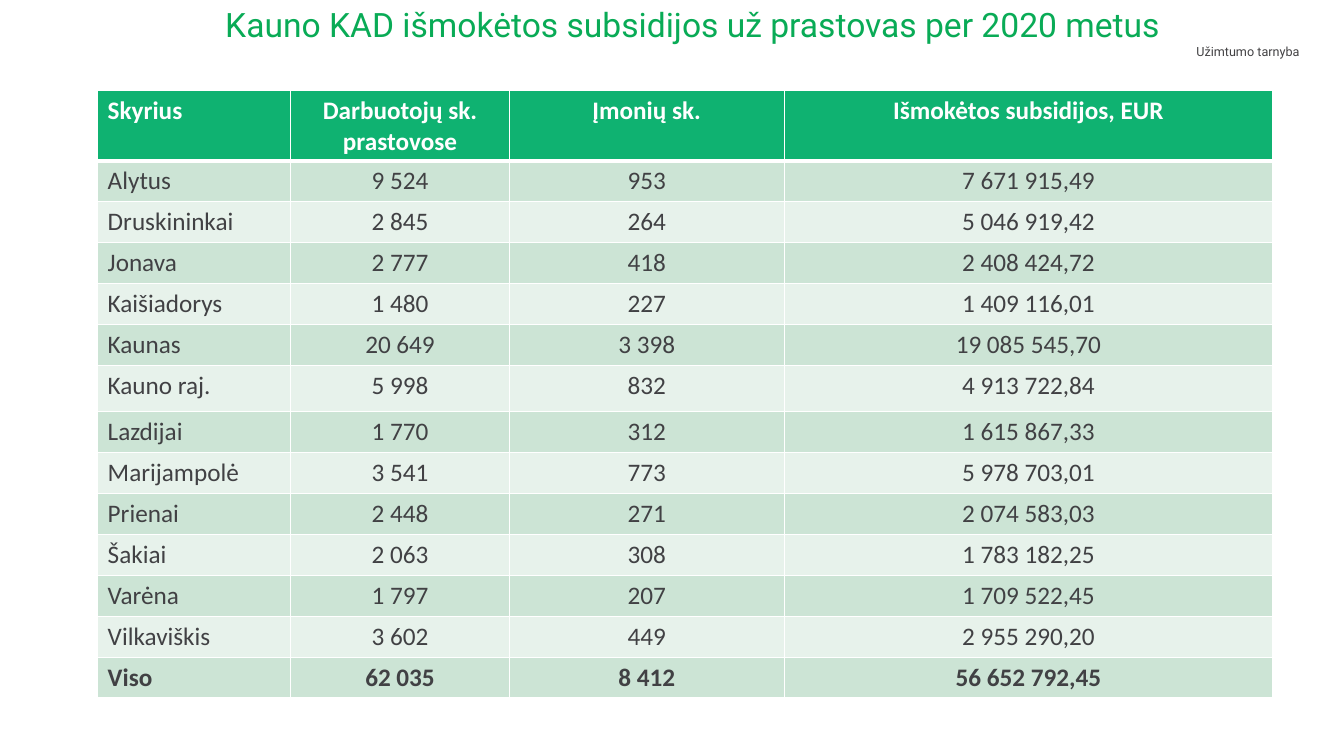
from dataclasses import dataclass

from lxml.etree import SubElement
from pptx import Presentation
from pptx.dml.color import RGBColor as Rgb
from pptx.enum.text import MSO_ANCHOR as Anchor, PP_ALIGN as Align
from pptx.oxml.ns import qn
from pptx.util import Pt

PX = 9525


@dataclass(frozen=True)
class Theme:
    title_font: str = "Roboto"
    table_font: str = "Calibri"
    title_size: int = 24
    label_size: int = 9
    table_size: int = 18
    title: str = "09AB56"
    label: str = "434244"
    body: str = "414144"
    header: str = "0FB271"
    bands: tuple = ("CCE4D5", "E7F2EB")
    white: str = "FFFFFF"


THEME = Theme()
TITLE = "Kauno KAD išmokėtos subsidijos už prastovas per 2020 metus"
LABEL = "Užimtumo tarnyba"
ROWS = [
    ("Skyrius", "Darbuotojų sk. prastovose", "Įmonių sk.", "Išmokėtos subsidijos, EUR"),
    ("Alytus", "9 524", "953", "7 671 915,49"),
    ("Druskininkai", "2 845", "264", "5 046 919,42"),
    ("Jonava", "2 777", "418", "2 408 424,72"),
    ("Kaišiadorys", "1 480", "227", "1 409 116,01"),
    ("Kaunas", "20 649", "3 398", "19 085 545,70"),
    ("Kauno raj.", "5 998", "832", "4 913 722,84"),
    ("Lazdijai", "1 770", "312", "1 615 867,33"),
    ("Marijampolė", "3 541", "773", "5 978 703,01"),
    ("Prienai", "2 448", "271", "2 074 583,03"),
    ("Šakiai", "2 063", "308", "1 783 182,25"),
    ("Varėna", "1 797", "207", "1 709 522,45"),
    ("Vilkaviškis", "3 602", "449", "2 955 290,20"),
    ("Viso", "62 035", "8 412", "56 652 792,45"),
]
COLUMN_WIDTHS = (184, 208, 262, 465)
ROW_HEIGHT = 39
SPECIAL_HEIGHTS = {"Skyrius": 67, "Kauno raj.": 44}


def set_values(target, values):
    for name, value in values.items():
        setattr(target, name, value)


def place(shape, left, top, width, height):
    sides = {"left": left, "top": top, "width": width, "height": height}
    set_values(shape, {name: value * PX for name, value in sides.items()})


def write(frame, text, align, font, size, color, bold=False):
    para = frame.paragraphs[0]
    para.alignment = align
    span = para.add_run()
    span.text = text
    set_values(span.font, {"name": font, "size": Pt(size), "bold": bold})
    span.font.color.rgb = Rgb.from_string(color)
    return para


def add_title(page):
    title = page.shapes.title
    place(title, 194, 3, 931, 123)
    frame = title.text_frame
    set_values(frame, {"word_wrap": True, "vertical_anchor": Anchor.TOP})
    para = write(frame, TITLE, Align.CENTER, THEME.title_font, THEME.title_size, THEME.title)
    para.line_spacing = 0.9


def add_label(page):
    box = page.shapes.add_textbox(815 * PX, 37 * PX, 432 * PX, 45 * PX)
    box.text_frame.word_wrap = True
    write(box.text_frame, LABEL, Align.RIGHT, THEME.title_font, THEME.label_size, THEME.label)


def add_borders(cell, widths):
    properties = cell._tc.get_or_add_tcPr()
    for index, (side, width) in enumerate(widths.items()):
        line = SubElement(properties, qn(f"a:ln{side}"), w=str(Pt(width)))
        fill = SubElement(line, qn("a:solidFill"))
        SubElement(fill, qn("a:srgbClr"), val=THEME.white)
        properties.insert(index, line)


def fill_cell(cell, text, row, column):
    is_header = row == 0
    cell.fill.solid()
    fill = THEME.header if is_header else THEME.bands[(row - 1) % 2]
    cell.fill.fore_color.rgb = Rgb.from_string(fill)
    write(
        cell.text_frame,
        text,
        Align.CENTER if column else Align.LEFT,
        THEME.table_font,
        THEME.table_size,
        THEME.white if is_header else THEME.body,
        bold=row in (0, len(ROWS) - 1),
    )
    top = 3 if row == 1 else 1
    bottom = 3 if is_header else 1
    add_borders(cell, {"L": 1, "R": 1, "T": top, "B": bottom})


def add_subsidy_table(page):
    heights = [SPECIAL_HEIGHTS.get(values[0], ROW_HEIGHT) for values in ROWS]
    holder = page.shapes.add_table(
        len(ROWS), len(COLUMN_WIDTHS),
        93 * PX, 86 * PX, sum(COLUMN_WIDTHS) * PX, sum(heights) * PX,
    )
    table = holder.table
    table.horz_banding = False
    for column, width in zip(table.columns, COLUMN_WIDTHS):
        column.width = width * PX
    for row, (values, height) in enumerate(zip(ROWS, heights)):
        table.rows[row].height = height * PX
        for column, text in enumerate(values):
            fill_cell(table.cell(row, column), text, row, column)


def main():
    deck = Presentation()
    set_values(deck, {"slide_width": 1280 * PX, "slide_height": 720 * PX})
    page = deck.slides.add_slide(deck.slide_layouts[5])
    add_label(page)
    add_subsidy_table(page)
    add_title(page)
    deck.save("out.pptx")


if __name__ == "__main__":
    main()
